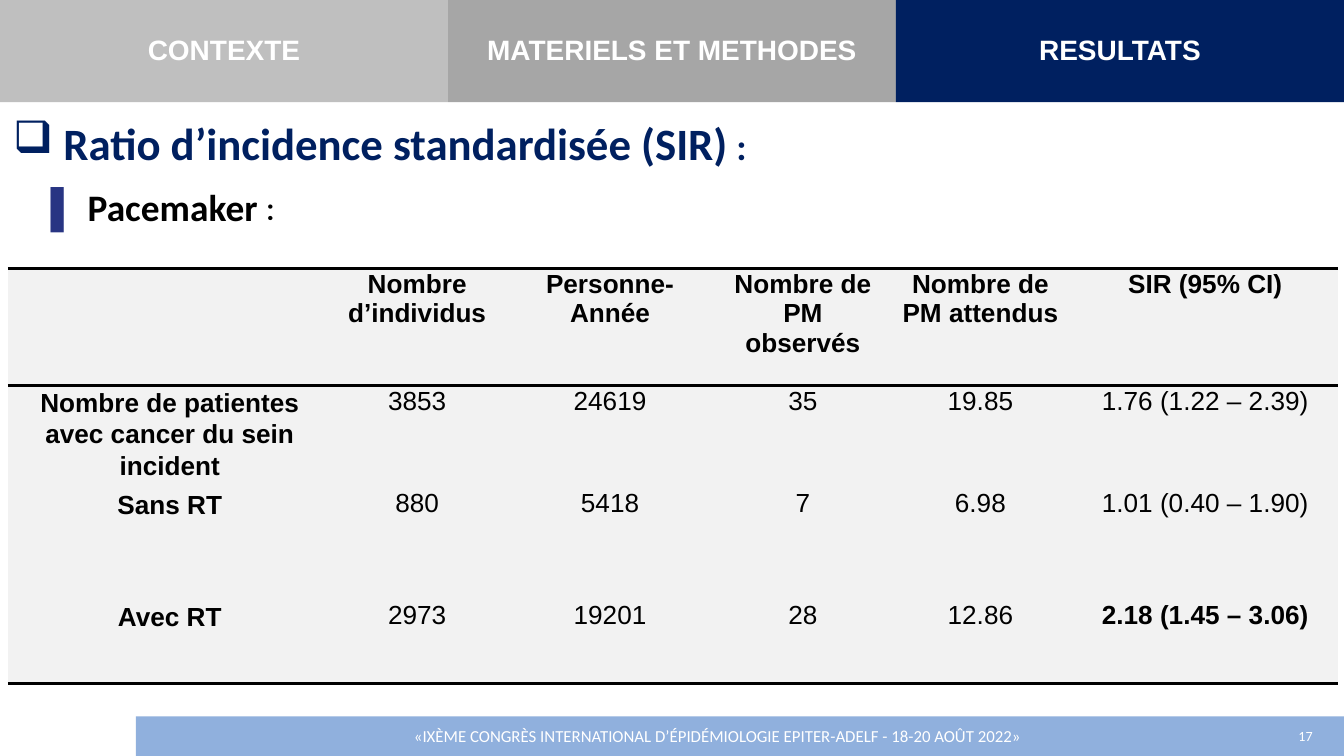
import pptx
import pptx.dml.color
import pptx.enum.shapes
import pptx.enum.text
import pptx.oxml
import pptx.oxml.ns
import pptx.util

Cm = pptx.util.Cm
Pt = pptx.util.Pt
ALIGN = pptx.enum.text.PP_ALIGN
MIDDLE = pptx.enum.text.MSO_ANCHOR.MIDDLE

SLIDE_WIDTH = 25.4
NAVY = "002060"
WHITE = "FFFFFF"
BLACK = "000000"

COLUMN_WIDTHS = [6.12, 3.23, 4.06, 3.23, 3.48, 5.02]
ROW_HEIGHTS = [2.21, 1.7, 2.11, 1.6]
RESULTS = [
    ["", "Nombre d’individus", "Personne-Année", "Nombre de PM observés",
     "Nombre de PM attendus", "SIR (95% CI)"],
    ["Nombre de patientes avec cancer du sein incident", "3853", "24619", "35",
     "19.85", "1.76 (1.22 – 2.39)"],
    ["Sans RT", "880", "5418", "7", "6.98", "1.01 (0.40 – 1.90)"],
    ["Avec RT", "2973", "19201", "28", "12.86", "2.18 (1.45 – 3.06)"],
]


def rgb(value):
    return pptx.dml.color.RGBColor.from_string(value)


def format_run(run, size, font, color, bold=False):
    run.font.size = Pt(size)
    run.font.name = font
    run.font.color.rgb = rgb(color)
    run.font.bold = bold


def add_bar(slide, left, top, width, height, color):
    bar = slide.shapes.add_shape(
        pptx.enum.shapes.MSO_SHAPE.RECTANGLE,
        Cm(left), Cm(top), Cm(width), Cm(height))
    bar.shadow.inherit = False
    bar.fill.solid()
    bar.fill.fore_color.rgb = rgb(color)
    bar.line.fill.background()
    return bar


def add_tab(slide, index, label, color):
    width = SLIDE_WIDTH / 3
    frame = add_bar(slide, index * width, -0.07, width, 2, color).text_frame
    frame.text = label
    frame.vertical_anchor = MIDDLE
    frame.paragraphs[0].alignment = ALIGN.CENTER
    format_run(frame.paragraphs[0].runs[0], 15, "Arial", WHITE, True)


def add_text(slide, left, top, width, height, pieces, align=ALIGN.LEFT):
    frame = slide.shapes.add_textbox(
        Cm(left), Cm(top), Cm(width), Cm(height)).text_frame
    frame.word_wrap = True
    paragraph = frame.paragraphs[0]
    paragraph.alignment = align
    for text, *style in pieces:
        run = paragraph.add_run()
        run.text = text
        format_run(run, *style)
    return frame


def add_bullet(paragraph, symbol, indent):
    properties = paragraph._p.get_or_add_pPr()
    properties.set("marL", str(Cm(indent)))
    properties.set("indent", str(-Cm(indent)))
    properties.append(pptx.oxml.parse_xml(
        f'<a:buChar {pptx.oxml.ns.nsdecls("a")} char="{symbol}"/>'))


def set_borders(cell, ruled_sides):
    properties = cell._tc.get_or_add_tcPr()
    for position, side in enumerate("LRTB"):
        if side in ruled_sides:
            paint = f'<a:solidFill><a:srgbClr val="{BLACK}"/></a:solidFill>'
        else:
            paint = "<a:noFill/>"
        properties.insert(position, pptx.oxml.parse_xml(
            f'<a:ln{side} {pptx.oxml.ns.nsdecls("a")} w="{Pt(2)}">'
            f'{paint}</a:ln{side}>'))


def fill_cell(cell, text, bold, line_spacing):
    cell.fill.solid()
    cell.fill.fore_color.rgb = rgb("F2F2F2")
    cell.margin_left = cell.margin_right = Cm(0.18)
    cell.margin_top = Cm(0.03)
    cell.margin_bottom = 0
    cell.text = text
    paragraph = cell.text_frame.paragraphs[0]
    paragraph.alignment = ALIGN.CENTER
    paragraph.space_after = Pt(8)
    paragraph.line_spacing = line_spacing
    for run in paragraph.runs:
        format_run(run, 14, "Arial", BLACK, bold)


def add_results_table(slide):
    table = slide.shapes.add_table(
        len(RESULTS), len(COLUMN_WIDTHS), Cm(0.15), Cm(5.07),
        Cm(sum(COLUMN_WIDTHS)), Cm(sum(ROW_HEIGHTS))).table
    for column, width in zip(table.columns, COLUMN_WIDTHS):
        column.width = Cm(width)
    for row, height in zip(table.rows, ROW_HEIGHTS):
        row.height = Cm(height)
    ruled_sides = ["TB", "T", "", "B"]
    last_cell = (len(RESULTS) - 1, len(COLUMN_WIDTHS) - 1)
    for r, values in enumerate(RESULTS):
        for c, value in enumerate(values):
            cell = table.cell(r, c)
            bold = r == 0 or c == 0 or (r, c) == last_cell
            fill_cell(cell, value, bold, 1.07 if r and c == 0 else 1.0)
            set_borders(cell, ruled_sides[r])


def add_footer(slide):
    top, height = 13.54, 0.75
    add_bar(slide, 2.57, top, SLIDE_WIDTH - 2.57, height, "90B0DD")
    number = add_text(slide, 23.95, top, 1.45, height,
                      [("17", 7.5, "Calibri", WHITE)], ALIGN.CENTER)
    congress = add_text(
        slide, 2.36, top, 16.92, height,
        [("«IXÈME CONGRÈS INTERNATIONAL D’ÉPIDÉMIOLOGIE EPITER-ADELF"
          " - 18-20 AOÛT 2022»", 9, "Calibri", WHITE)], ALIGN.RIGHT)
    congress.margin_left = congress.margin_right = 0
    for frame in (number, congress):
        frame.vertical_anchor = MIDDLE


def main():
    presentation = pptx.Presentation()
    presentation.slide_width = Cm(SLIDE_WIDTH)
    presentation.slide_height = Cm(14.29)
    slide = presentation.slides.add_slide(presentation.slide_layouts[6])

    tabs = [("CONTEXTE", "BFBFBF"), ("MATERIELS ET METHODES", "A6A6A6"),
            ("RESULTATS", NAVY)]
    for index, (label, color) in enumerate(tabs):
        add_tab(slide, index, label, color)

    heading = add_text(slide, 0, 2.06, 18.06, 1.28, [
        ("Ratio d’incidence standardisée (SIR)", 24, "Calibri", NAVY, True),
        (" :", 20, "Calibri", NAVY, True)])
    add_bullet(heading.paragraphs[0], "❑", 0.95)
    add_text(slide, 0.71, 3.35, 16.64, 1.11, [
        ("▌ ", 20, "Arial", "283583"),
        ("Pacemaker ", 20, "Calibri", BLACK, True),
        (":", 20, "Karla", BLACK)])

    add_results_table(slide)
    add_footer(slide)
    presentation.save("out.pptx")


if __name__ == "__main__":
    main()
